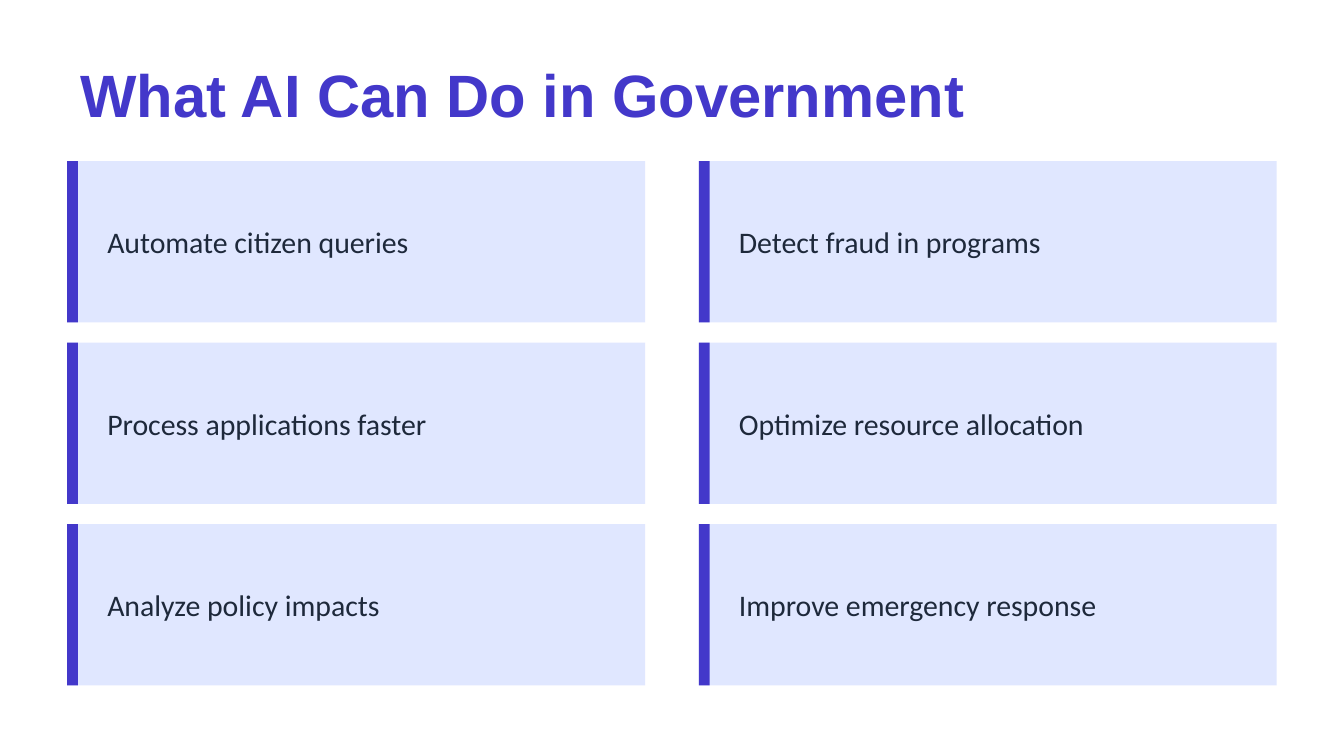
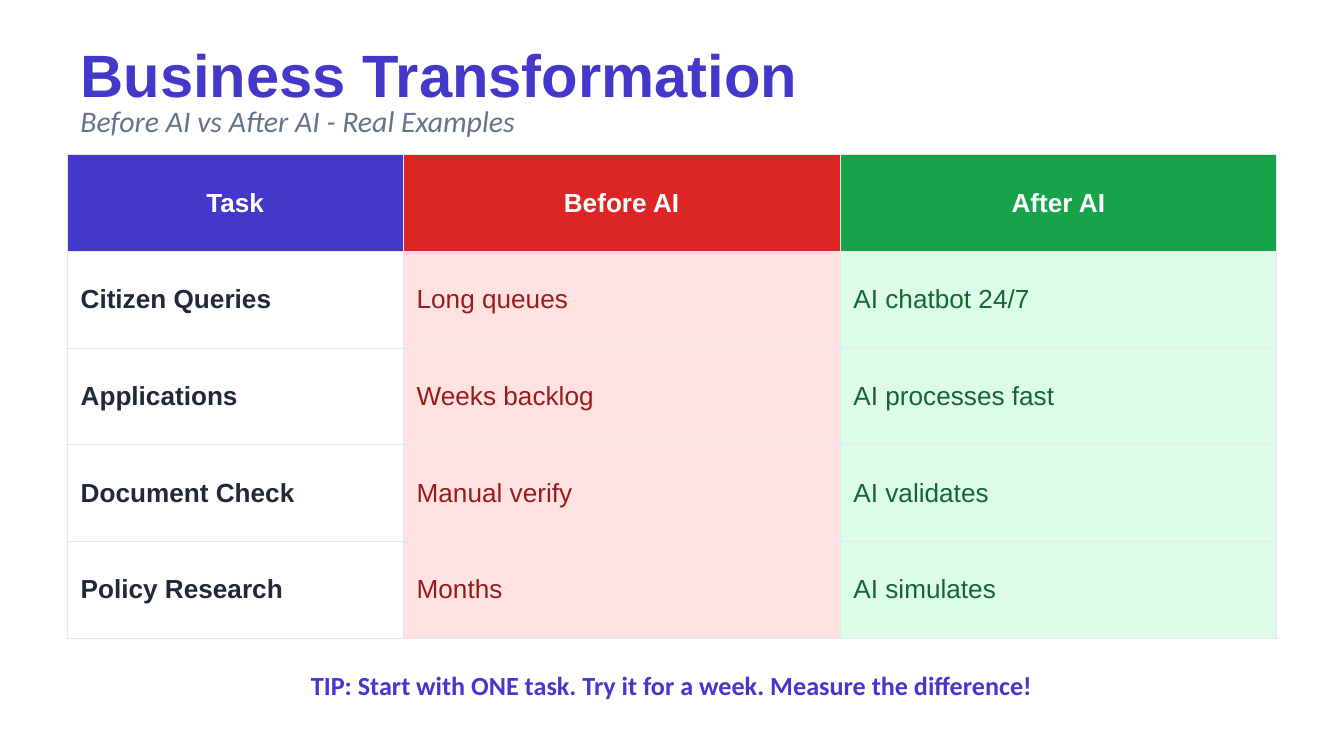
import dataclasses
import itertools
from typing import Any

import lxml.etree
import pptx
import pptx.dml.color
import pptx.enum.shapes
import pptx.enum.text
import pptx.oxml.ns
import pptx.util

Inches = pptx.util.Inches
Pt = pptx.util.Pt
ALIGN = pptx.enum.text.PP_ALIGN
TITLE_ONLY_LAYOUT = 5

COLORS = {
    "indigo": "4338CA",
    "card": "E0E7FF",
    "ink": "1E293B",
    "muted": "64748B",
    "white": "FFFFFF",
    "border": "E2E8F0",
    "red": "DC2626",
    "red_pale": "FEE2E2",
    "red_dark": "991B1B",
    "green": "16A34A",
    "green_pale": "DCFCE7",
    "green_dark": "166534",
}


@dataclasses.dataclass(frozen=True)
class Box:
    left: float
    top: float
    width: float
    height: float

    def lengths(self) -> tuple[int, int, int, int]:
        return (Inches(self.left), Inches(self.top), Inches(self.width), Inches(self.height))


@dataclasses.dataclass(frozen=True)
class Column:
    width: float
    header: str
    header_fill: str
    body_fill: str | None
    body_color: str
    body_bold: bool
    entries: tuple[str, ...]


CAPABILITIES = (
    ("Automate citizen queries", "Process applications faster", "Analyze policy impacts"),
    ("Detect fraud in programs", "Optimize resource allocation", "Improve emergency response"),
)

COMPARISON = (
    Column(2.5, "Task", "indigo", None, "ink", True,
           ("Citizen Queries", "Applications", "Document Check", "Policy Research")),
    Column(3.25, "Before AI", "red", "red_pale", "red_dark", False,
           ("Long queues", "Weeks backlog", "Manual verify", "Months")),
    Column(3.25, "After AI", "green", "green_pale", "green_dark", False,
           ("AI chatbot 24/7", "AI processes fast", "AI validates", "AI simulates")),
)


def rgb(name: str) -> pptx.dml.color.RGBColor:
    return pptx.dml.color.RGBColor.from_string(COLORS[name])


def write_text(text_frame: Any, text: str, *, size: float, color: str, font: str = "Calibri",
               bold: bool = False, italic: bool = False, align: Any = ALIGN.LEFT) -> None:
    text_frame.word_wrap = True
    paragraph = text_frame.paragraphs[0]
    paragraph.alignment = align
    run = paragraph.add_run()
    run.text = text
    run.font.name = font
    run.font.size = Pt(size)
    run.font.bold = bold
    run.font.italic = italic
    run.font.color.rgb = rgb(color)


def add_text(slide: Any, box: Box, text: str, **text_format: Any) -> None:
    text_frame = slide.shapes.add_textbox(*box.lengths()).text_frame
    text_frame.vertical_anchor = pptx.enum.text.MSO_ANCHOR.MIDDLE
    write_text(text_frame, text, **text_format)


def add_rectangle(slide: Any, box: Box, color: str) -> None:
    shape = slide.shapes.add_shape(pptx.enum.shapes.MSO_SHAPE.RECTANGLE, *box.lengths())
    shape.shadow.inherit = False
    shape.fill.solid()
    shape.fill.fore_color.rgb = rgb(color)
    shape.line.fill.background()


def add_titled_slide(presentation: Any, title_text: str, box: Box) -> Any:
    slide = presentation.slides.add_slide(presentation.slide_layouts[TITLE_ONLY_LAYOUT])
    slide.background.fill.solid()
    slide.background.fill.fore_color.rgb = rgb("white")
    title = slide.shapes.title
    title.left, title.top, title.width, title.height = box.lengths()
    title.text_frame.auto_size = pptx.enum.text.MSO_AUTO_SIZE.NONE
    title.text_frame.vertical_anchor = pptx.enum.text.MSO_ANCHOR.MIDDLE
    write_text(title.text_frame, title_text, size=32, color="indigo", font="Arial", bold=True)
    return slide


def add_card(slide: Any, box: Box, text: str) -> None:
    add_rectangle(slide, box, "card")
    add_rectangle(slide, dataclasses.replace(box, width=0.08), "indigo")
    text_box = Box(box.left + 0.2, box.top + 0.15, box.width - 0.4, box.height - 0.3)
    add_text(slide, text_box, text, size=16, color="ink")


def set_borders(cell: Any, color: str, width: float) -> None:
    qualified = pptx.oxml.ns.qn
    properties = cell._tc.get_or_add_tcPr()
    for side in ("a:lnL", "a:lnR", "a:lnT", "a:lnB"):
        line = lxml.etree.SubElement(properties, qualified(side), w=str(Pt(width)))
        fill = lxml.etree.SubElement(line, qualified("a:solidFill"))
        lxml.etree.SubElement(fill, qualified("a:srgbClr"), val=COLORS[color])


def fill_cell(cell: Any, text: str, fill: str | None, **text_format: Any) -> None:
    set_borders(cell, "border", 0.5)
    if fill is None:
        cell.fill.background()
    else:
        cell.fill.solid()
        cell.fill.fore_color.rgb = rgb(fill)
    cell.vertical_anchor = pptx.enum.text.MSO_ANCHOR.MIDDLE
    write_text(cell.text_frame, text, size=14, font="Arial", **text_format)


def add_comparison_table(slide: Any, box: Box, columns: tuple[Column, ...]) -> None:
    row_count = len(columns[0].entries) + 1
    table = slide.shapes.add_table(row_count, len(columns), *box.lengths()).table
    table.first_row = False
    table.horz_banding = False
    for row in table.rows:
        row.height = Inches(box.height / row_count)
    for column_index, column in enumerate(columns):
        table.columns[column_index].width = Inches(column.width)
        fill_cell(table.cell(0, column_index), column.header, column.header_fill,
                  color="white", bold=True, align=ALIGN.CENTER)
        for row_index, entry in enumerate(column.entries, start=1):
            fill_cell(table.cell(row_index, column_index), entry, column.body_fill,
                      color=column.body_color, bold=column.body_bold)


def build_capabilities_slide(presentation: Any) -> None:
    slide = add_titled_slide(presentation, "What AI Can Do in Government", Box(0.5, 0.4, 9, 0.6))
    for column, row in itertools.product(range(2), range(3)):
        box = Box(0.5 + 4.7 * column, 1.2 + 1.35 * row, 4.3, 1.2)
        add_card(slide, box, CAPABILITIES[column][row])


def build_transformation_slide(presentation: Any) -> None:
    slide = add_titled_slide(presentation, "Business Transformation", Box(0.5, 0.3, 9, 0.5))
    add_text(slide, Box(0.5, 0.75, 9, 0.3), "Before AI vs After AI - Real Examples",
             size=16, color="muted", italic=True)
    add_comparison_table(slide, Box(0.5, 1.15, 9, 3.6), COMPARISON)
    add_text(slide, Box(0.5, 4.9, 9, 0.4),
             "TIP: Start with ONE task. Try it for a week. Measure the difference!",
             size=14, color="indigo", bold=True, align=ALIGN.CENTER)


def main() -> None:
    presentation = pptx.Presentation()
    presentation.slide_width = Inches(10)
    presentation.slide_height = Inches(10 * 9 / 16)
    build_capabilities_slide(presentation)
    build_transformation_slide(presentation)
    presentation.save("out.pptx")


if __name__ == "__main__":
    main()
